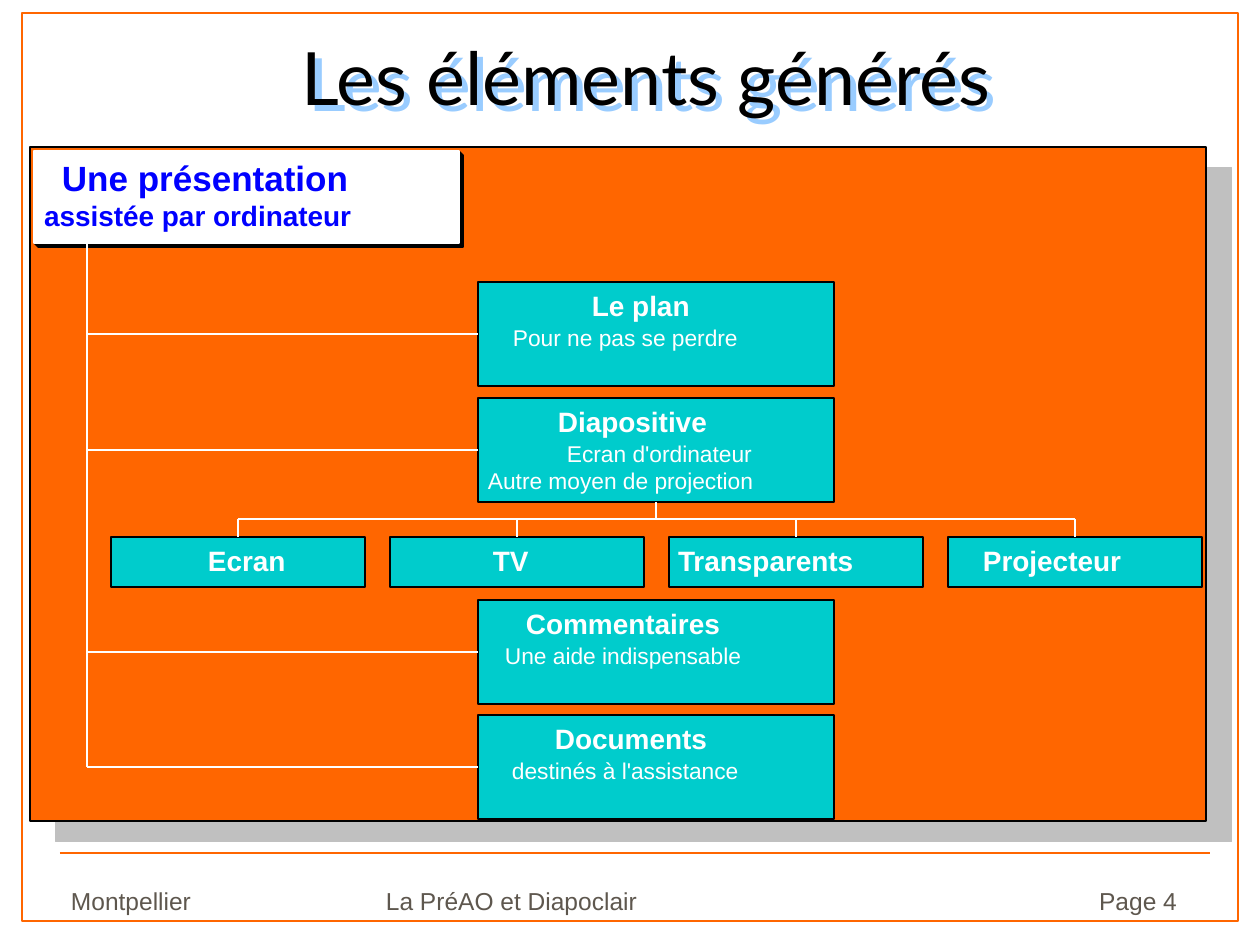
import pptx
import pptx.util
import pptx.dml.color
import pptx.enum.shapes
import pptx.enum.text
import pptx.oxml
import pptx.oxml.ns
from dataclasses import dataclass

EMU_PER_PX = 914400 / 126
ALIGN = pptx.enum.text.PP_ALIGN
ANCHOR = pptx.enum.text.MSO_ANCHOR
RECT = pptx.enum.shapes.MSO_SHAPE.RECTANGLE
STRAIGHT = pptx.enum.shapes.MSO_CONNECTOR.STRAIGHT
TOP, LEFT, BOTTOM = 0, 1, 2


@dataclass(frozen=True)
class Theme:
    accent: str = "FF6600"
    node: str = "00CCCC"
    white: str = "FFFFFF"
    black: str = "000000"
    root_text: str = "0000FF"
    footer_text: str = "5E574E"
    panel_shadow: str = "C0C0C0"
    title_shadow: str = "99CCFF"
    font: str = "Arial"
    title_font: str = "Lato"
    title: int = 42
    root: int = 20
    heading: int = 16
    footer: int = 14
    detail: int = 13
    thin: float = 0.75
    line: float = 1.13


T = Theme()


def px(n):
    return pptx.util.Emu(round(n * EMU_PER_PX))


def rgb(color):
    return pptx.dml.color.RGBColor.from_string(color)


def add_rect(s, box, fill=None, line=None, width=T.line):
    sp = s.shapes.add_shape(RECT, *map(px, box))
    sp.shadow.inherit = False
    if fill:
        sp.fill.solid()
        sp.fill.fore_color.rgb = rgb(fill)
    else:
        sp.fill.background()
    sp.line.color.rgb = rgb(line)
    sp.line.width = pptx.util.Pt(width)
    return sp


def add_line(s, start, end, color=T.white, width=T.line):
    c = s.shapes.add_connector(STRAIGHT, *map(px, start + end))
    c.line.color.rgb = rgb(color)
    c.line.width = pptx.util.Pt(width)
    c._element.spPr.append(pptx.oxml.parse_xml(
        f'<a:effectLst {pptx.oxml.ns.nsdecls("a")}/>'))
    return c


def add_text(s, box, text, size, color=T.white, bold=False, font=T.font,
             align=ALIGN.LEFT, anchor=ANCHOR.TOP):
    sp = s.shapes.add_textbox(*map(px, box))
    tf = sp.text_frame
    tf.margin_left = tf.margin_right = tf.margin_top = tf.margin_bottom = 0
    tf.word_wrap = True
    tf.vertical_anchor = anchor
    tf.text = text
    p = tf.paragraphs[0]
    p.alignment = align
    r = p.runs[0]
    r.font.name = font
    r.font.size = pptx.util.Pt(size)
    r.font.bold = bold
    r.font.color.rgb = rgb(color)
    return sp


def set_shadow(sp, color, distance, degrees):
    """Give the shape a hard, opaque shadow."""
    spPr = sp._element.spPr
    for old in spPr.findall(pptx.oxml.ns.qn("a:effectLst")):
        spPr.remove(old)
    spPr.append(pptx.oxml.parse_xml(
        f'<a:effectLst {pptx.oxml.ns.nsdecls("a")}>'
        f'<a:outerShdw blurRad="0" dist="{px(distance)}" dir="{degrees * 60000}" '
        f'algn="ctr" rotWithShape="0"><a:srgbClr val="{color}"/></a:outerShdw>'
        f'</a:effectLst>'))


def draw_frame(s, box):
    """Page border, footer rule and footer texts."""
    x, y, w, h = box
    add_line(s, (x + 38, y + 840), (x + 1188, y + 840), T.accent, T.thin)
    add_rect(s, box, line=T.accent, width=T.thin)
    footers = (("Montpellier", 49, 240, ALIGN.LEFT),
               ("La PréAO et Diapoclair", 364, 490, ALIGN.LEFT),
               ("Page 4", 915, 240, ALIGN.RIGHT))
    for text, dx, width, align in footers:
        add_text(s, (x + dx, y + 845, width, 57), text, T.footer,
                 T.footer_text, align=align, anchor=ANCHOR.BOTTOM)


def draw_title(s, box):
    sp = add_text(s, box, "Les éléments générés", T.title, T.black,
                  font=T.title_font, align=ALIGN.CENTER)
    set_shadow(sp, T.title_shadow, 9, 45)


def draw_root(s, box):
    """White card with a stepped black edge."""
    x, y, w, h = box
    for step in range(1, 5):
        add_rect(s, (x + step, y + step, w, h), line=T.black)
    add_rect(s, box, T.white, T.white)
    add_text(s, (x + 28, y + 6, 393, 49), "Une présentation", T.root,
             T.root_text, True)
    add_text(s, (x + 10, y + 48, 410, 43), "assistée par ordinateur",
             T.heading, T.root_text, True)


def draw_node(s, box, heading, details=()):
    """Box with a heading and details, each given as (text, left offset)."""
    x, y, w, h = box
    sp = add_rect(s, box, T.node, T.black)
    text, dx = heading
    add_text(s, (x + dx, y + 7, w - dx, 34), text, T.heading, bold=True)
    for i, (text, dx) in enumerate(details):
        add_text(s, (x + dx, y + 42 + 27 * i, w - dx, 30), text, T.detail)
    return sp


def draw_leaves(s, box, parent, stem):
    """Row of four equal boxes hung from a bar below the parent."""
    x, y, w, h = box
    gap, bar = 25, y - 18
    leaves = (("Ecran", 97), ("TV", 103), ("Transparents", 9), ("Projecteur", 35))
    leaf_w = (w - gap * (len(leaves) - 1)) // len(leaves)
    centers = []
    for i, heading in enumerate(leaves):
        left = x + i * (leaf_w + gap)
        sp = draw_node(s, (left, y, leaf_w, h), heading)
        center = left + leaf_w // 2
        centers.append(center)
        add_line(s, (center, bar), (center, y)).end_connect(sp, TOP)
    add_line(s, (centers[0], bar), (centers[-1], bar))
    add_line(s, (stem, bar - 17), (stem, bar)).begin_connect(parent, BOTTOM)


def draw_chart(s, box):
    """Panel with the tree of generated elements."""
    x, y, w, h = box
    set_shadow(add_rect(s, box, T.accent, T.black, T.thin), T.panel_shadow, 33, 39)
    trunk, node_x, node_w, node_h = x + 57, x + 448, 356, 104
    nodes = (
        (135, ("Le plan", 114), (("Pour ne pas se perdre", 35),)),
        (251, ("Diapositive", 80), (("Ecran d'ordinateur", 89),
                                    ("Autre moyen de projection", 10))),
        (453, ("Commentaires", 48), (("Une aide indispensable", 27),)),
        (568, ("Documents", 77), (("destinés à l'assistance", 34),)))
    shapes = []
    for dy, heading, details in nodes:
        top = y + dy
        sp = draw_node(s, (node_x, top, node_w, node_h), heading, details)
        middle = top + node_h // 2
        add_line(s, (trunk, middle), (node_x, middle)).end_connect(sp, LEFT)
        shapes.append(sp)
    draw_leaves(s, (x + 81, y + 390, 1091, 50), shapes[1], node_x + node_w // 2)
    draw_root(s, (x + 4, y + 4, 425, 92))
    add_line(s, (trunk, y + 96), (trunk, middle))


def main():
    prs = pptx.Presentation()
    prs.slide_width, prs.slide_height = px(1260), px(945)
    s = prs.slides.add_slide(prs.slide_layouts[6])
    draw_frame(s, (22, 13, 1216, 908))
    draw_chart(s, (30, 147, 1176, 674))
    draw_title(s, (95, 32, 1102, 118))
    prs.save("out.pptx")


if __name__ == "__main__":
    main()
